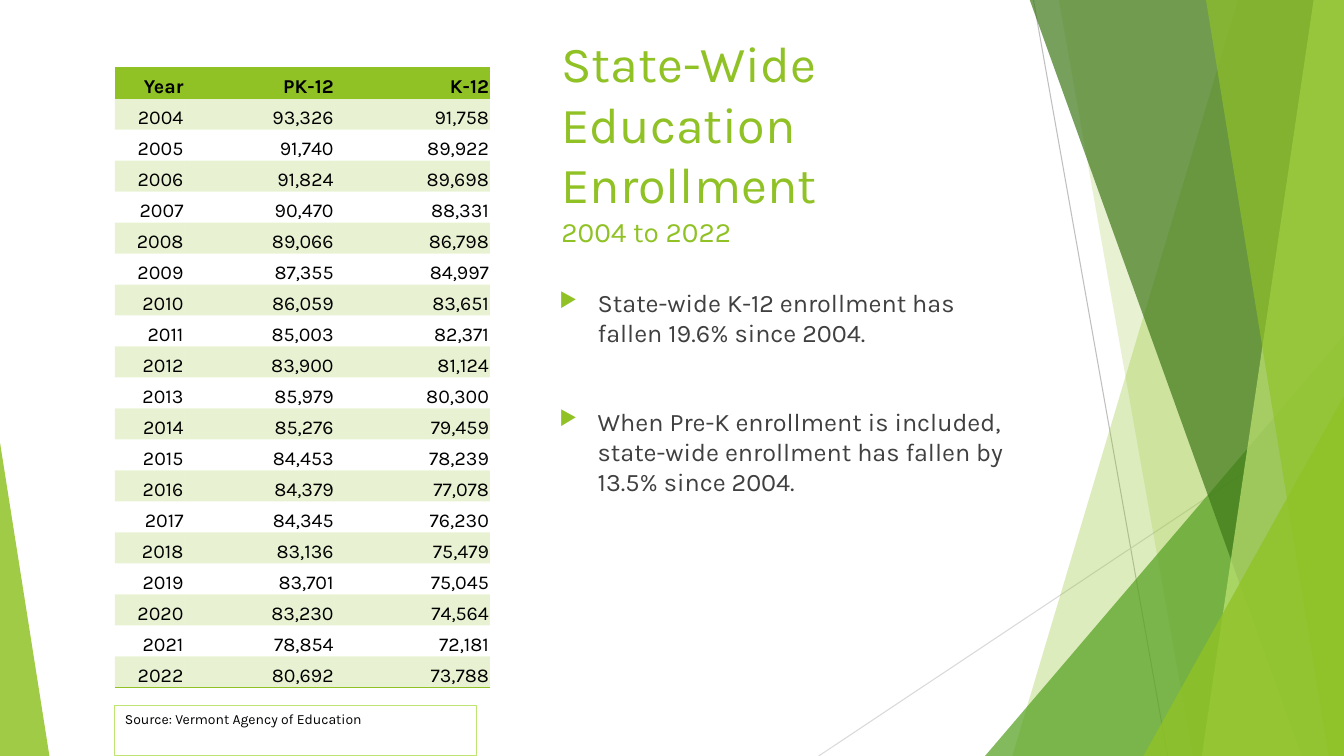
"""Builds the state-wide education enrollment slide."""
from lxml import etree
from pptx import Presentation
from pptx.dml.color import RGBColor
from pptx.enum.shapes import MSO_CONNECTOR, MSO_SHAPE
from pptx.enum.text import MSO_ANCHOR, PP_ALIGN
from pptx.oxml import parse_xml
from pptx.oxml.ns import nsdecls, qn
from pptx.util import Inches, Pt

STRAIGHT = MSO_CONNECTOR.STRAIGHT
RECTANGLE = MSO_SHAPE.RECTANGLE
TRIANGLE = MSO_SHAPE.ISOSCELES_TRIANGLE
TOP, MIDDLE, BOTTOM = MSO_ANCHOR.TOP, MSO_ANCHOR.MIDDLE, MSO_ANCHOR.BOTTOM
LEFT, RIGHT = PP_ALIGN.LEFT, PP_ALIGN.RIGHT

GREEN = RGBColor(0x90, 0xC2, 0x26)
LIME = RGBColor(0xC0, 0xE4, 0x74)
LEAF = RGBColor(0x54, 0xA0, 0x21)
FOREST = RGBColor(0x3F, 0x78, 0x19)
SILVER = RGBColor(0xBF, 0xBF, 0xBF)
MIST = RGBColor(0xD9, 0xD9, 0xD9)
CHARCOAL = RGBColor(0x40, 0x40, 0x40)
BLACK = RGBColor(0, 0, 0)
FONT = "Karla"
NO_STYLE = "{2D5ABB26-0587-4C30-8999-92F81FD0307C}"


def fill_solid(fill, color, opacity=100):
    fill.solid()
    fill.fore_color.rgb = color
    if opacity < 100:
        for node in fill._xPr.iter(qn("a:srgbClr")):
            etree.SubElement(node, qn("a:alpha")).set("val", str(opacity * 1000))


def style_runs(para, size, color, bold=False):
    for span in para.runs:
        span.font.name = FONT
        span.font.size = Pt(size)
        span.font.color.rgb = color
        span.font.bold = bold


deck = Presentation()
deck.slide_width, deck.slide_height = Inches(13.33), Inches(7.5)
page = deck.slides.add_slide(deck.slide_layouts[6])

for x1, y1, x2, y2, color in [
    (10.25, 0, 11.58, 7.5, SILVER),
    (13.33, 4.03, 8.12, 7.5, MIST),
]:
    line = page.shapes.add_connector(STRAIGHT, Inches(x1), Inches(y1), Inches(x2), Inches(y2))
    line.line.color.rgb = color
    line.line.width = Pt(0.75)
    etree.SubElement(line._element.spPr, qn("a:effectLst"))

# Each facet is (top left x, bottom left x) or a triangle (left, top, width, apex).
facets = [
    ((12.28, 10.04), GREEN, 30),
    ((10.5, 11.83), GREEN, 20),
    ((9.77, 3.33, 3.56, 1), LEAF, 72),
    ((10.21, 12.91), FOREST, 70),
    ((13.03, 11.92), LIME, 70),
    ((11.96, 13.18), GREEN, 65),
    ((11.34, 3.93, 1.99, 1), GREEN, 80),
    ((0, 4.39, 0.49, 0), GREEN, 85),
]
for geometry, color, opacity in facets:
    if len(geometry) == 2:
        top_x, bottom_x = geometry
        outline = page.shapes.build_freeform(Inches(top_x), Inches(-0.01))
        corners = [(13.33, -0.01), (13.33, 7.5), (bottom_x, 7.5)]
        outline.add_line_segments([(Inches(x), Inches(y)) for x, y in corners])
        facet = outline.convert_to_shape()
    else:
        left, top, width, apex = geometry
        facet = page.shapes.add_shape(
            TRIANGLE, Inches(left), Inches(top), Inches(width), Inches(7.5 - top))
        facet.adjustments[0] = apex
    facet.shadow.inherit = False
    facet.line.fill.background()
    fill_solid(facet.fill, color, opacity)

title = page.shapes.add_textbox(Inches(5.47), Inches(0.67), Inches(5.03), Inches(1.44))
title.text_frame.word_wrap = True
title.text_frame.vertical_anchor = MIDDLE
heading = title.text_frame.paragraphs[0]
heading.text = "State-Wide \vEducation Enrollment\v2004 to 2022"
style_runs(heading, 36, GREEN)
heading.runs[-1].font.size = Pt(20)

body = page.shapes.add_textbox(Inches(5.45), Inches(2.36), Inches(4.69), Inches(4.12))
body.text_frame.word_wrap = True
body.text_frame.margin_top = Inches(0.49)
body.text_frame.text = (
    "State-wide K-12 enrollment has fallen 19.6% since 2004.\n"
    "When Pre-K enrollment is included, state-wide enrollment has fallen by 13.5% since 2004."
)
for para, space in zip(body.text_frame.paragraphs, (0, 41.5)):
    style_runs(para, 18, CHARCOAL)
    para.space_before = Pt(space)
    props = para._p.get_or_add_pPr()
    props.set("marL", str(Inches(0.38)))
    props.set("indent", str(-Inches(0.38)))
    bullet_color = etree.SubElement(props, qn("a:buClr"))
    etree.SubElement(bullet_color, qn("a:srgbClr")).set("val", str(GREEN))
    etree.SubElement(props, qn("a:buSzPct")).set("val", "80000")
    etree.SubElement(props, qn("a:buChar")).set("char", "▶")

enrollment = [
    ("Year", "PK-12", "K-12"),
    ("2004", "93,326", "91,758"),
    ("2005", "91,740", "89,922"),
    ("2006", "91,824", "89,698"),
    ("2007", "90,470", "88,331"),
    ("2008", "89,066", "86,798"),
    ("2009", "87,355", "84,997"),
    ("2010", "86,059", "83,651"),
    ("2011", "85,003", "82,371"),
    ("2012", "83,900", "81,124"),
    ("2013", "85,979", "80,300"),
    ("2014", "85,276", "79,459"),
    ("2015", "84,453", "78,239"),
    ("2016", "84,379", "77,078"),
    ("2017", "84,345", "76,230"),
    ("2018", "83,136", "75,479"),
    ("2019", "83,701", "75,045"),
    ("2020", "83,230", "74,564"),
    ("2021", "78,854", "72,181"),
    ("2022", "80,692", "73,788"),
]
last = len(enrollment) - 1
table = page.shapes.add_table(
    len(enrollment), 3, Inches(1.14), Inches(0.67), Inches(3.72), Inches(6.15)).table
table.horz_banding = False
table._tbl.tblPr.find(qn("a:tableStyleId")).text = NO_STYLE
for column, width in zip(table.columns, (0.69, 1.49, 1.54)):
    column.width = Inches(width)
for r, values in enumerate(enrollment):
    edges = {0: ("lnT", "lnB"), last: ("lnB",)}.get(r, ())
    for c, value in enumerate(values):
        cell = table.cell(r, c)
        cell.vertical_anchor = BOTTOM
        cell.margin_left = cell.margin_right = cell.margin_top = Inches(0.01)
        cell.margin_bottom = 0
        para = cell.text_frame.paragraphs[0]
        para.text = value
        para.alignment = RIGHT
        style_runs(para, 14, BLACK, bold=r == 0)
        if r == 0:
            fill_solid(cell.fill, GREEN)
        elif r % 2:
            fill_solid(cell.fill, GREEN, 20)
        else:
            cell.fill.background()
        for position, edge in enumerate(edges):
            cell._tc.tcPr.insert(position, parse_xml(
                f'<a:{edge} {nsdecls("a")} w="{Pt(1)}"><a:solidFill>'
                f'<a:srgbClr val="{GREEN}"/></a:solidFill></a:{edge}>'))

source = page.shapes.add_shape(RECTANGLE, Inches(1.14), Inches(7), Inches(3.59), Inches(0.5))
source.shadow.inherit = False
source.fill.background()
source.line.color.rgb = LIME
source.line.width = Pt(0.75)
source.text_frame.word_wrap = True
source.text_frame.vertical_anchor = TOP
credit = source.text_frame.paragraphs[0]
credit.text = "Source: Vermont Agency of Education"
credit.alignment = LEFT
style_runs(credit, 10, BLACK)

deck.save("out.pptx")
